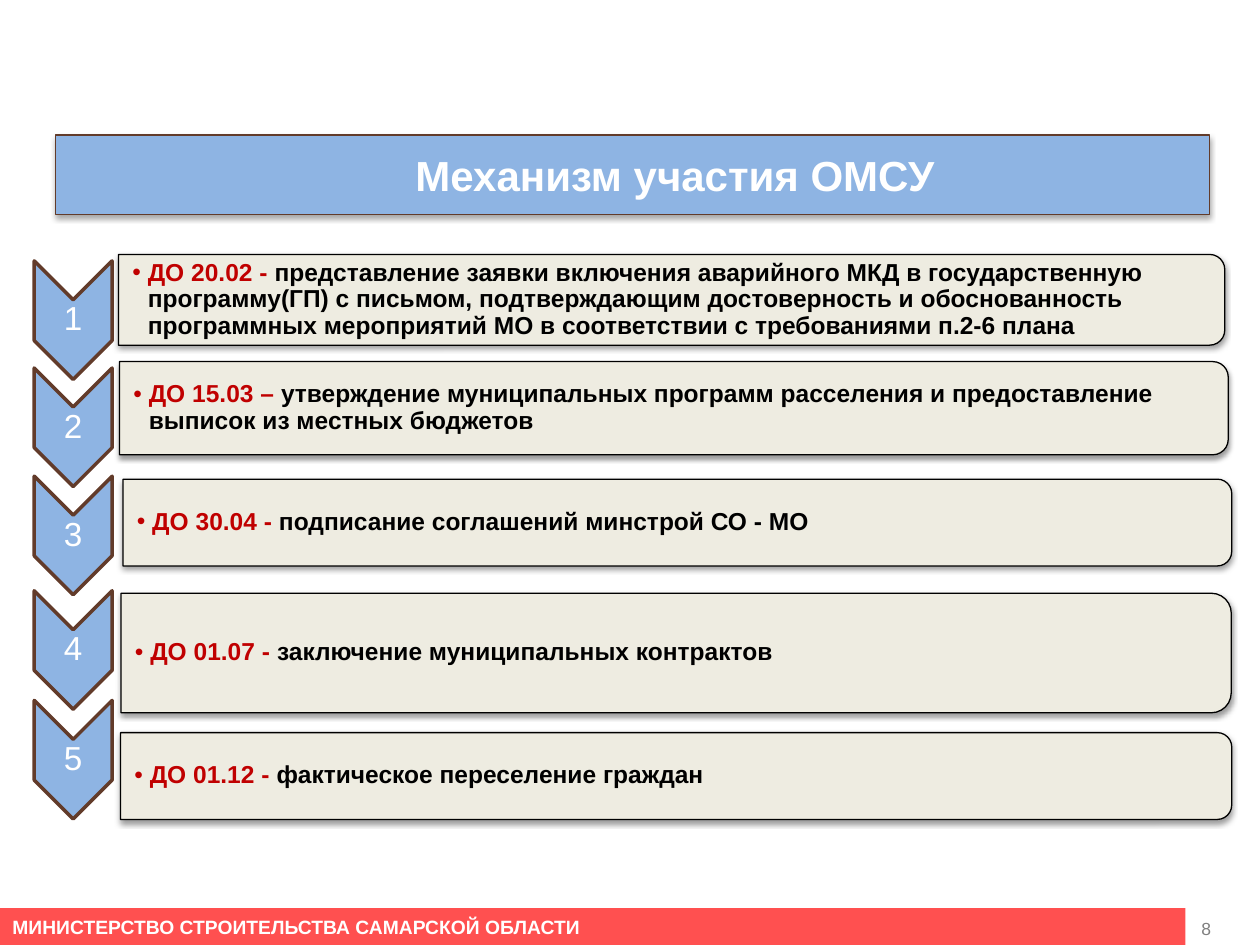
from lxml import etree
from pptx import Presentation
from pptx.dml.color import RGBColor
from pptx.enum.shapes import MSO_SHAPE
from pptx.enum.text import MSO_ANCHOR, MSO_AUTO_SIZE, PP_ALIGN
from pptx.oxml.ns import qn
from pptx.util import Cm, Pt

RECT = MSO_SHAPE.RECTANGLE
CHEVRON = MSO_SHAPE.CHEVRON
ROUND = MSO_SHAPE.ROUND_2_SAME_RECTANGLE
MIDDLE, BOTTOM = MSO_ANCHOR.MIDDLE, MSO_ANCHOR.BOTTOM
LEFT, CENTER = PP_ALIGN.LEFT, PP_ALIGN.CENTER
NO_FIT = MSO_AUTO_SIZE.NONE

COLORS = {
    "blue": "8EB4E3", "brown": "623B2A", "cream": "EEECE1", "black": "000000",
    "white": "FFFFFF", "red": "C00000", "coral": "FF5050", "gray": "808080",
}

STEPS = [
    (5.26, (2.39, 5.13, 22.3, 1.83), "ДО 20.02 - ",
     "представление заявки включения аварийного МКД в государственную "
     "программу(ГП) с письмом, подтверждающим достоверность и обоснованность "
     "программных мероприятий МО в соответствии с требованиями п.2-6 плана"),
    (7.42, (2.41, 7.29, 22.35, 1.88), "ДО 15.03 – ",
     "утверждение муниципальных программ расселения и предоставление "
     "выписок из местных бюджетов"),
    (9.6, (2.48, 9.66, 22.35, 1.75), "ДО 30.04 - ",
     "подписание соглашений минстрой СО - МО"),
    (11.91, (2.44, 11.96, 22.38, 2.41), "ДО 01.07 - ",
     "заключение муниципальных контрактов"),
    (14.12, (2.43, 14.77, 22.4, 1.75), "ДО 01.12 - ",
     "фактическое переселение граждан"),
]


def color(name):
    return RGBColor.from_string(COLORS[name])


def paint(shape, fill, line=None, width=0.75):
    shape.fill.solid()
    shape.fill.fore_color.rgb = color(fill)
    if line:
        shape.line.color.rgb = color(line)
        shape.line.width = Pt(width)
    else:
        shape.line.fill.background()


def shade(shape, alpha, dist):
    effects = etree.SubElement(shape._element.spPr, qn("a:effectLst"))
    shadow = etree.SubElement(
        effects, qn("a:outerShdw"), blurRad=str(Pt(3.1)), dist=str(Pt(dist)),
        dir="5400000", rotWithShape="0")
    tint = etree.SubElement(shadow, qn("a:srgbClr"), val=COLORS["black"])
    etree.SubElement(tint, qn("a:alpha"), val=str(alpha * 1000))


def style(font, size, tone, bold=False):
    font.name = "Arial"
    font.size = Pt(size)
    font.bold = bold
    font.color.rgb = color(tone)


def setup(frame, anchor, inset=None):
    frame.word_wrap = True
    frame.auto_size = NO_FIT
    frame.vertical_anchor = anchor
    if inset is not None:
        frame.margin_left = frame.margin_right = Cm(inset)
        frame.margin_top = frame.margin_bottom = Cm(0.03)
    return frame.paragraphs[0]


def add_text(slide, box, anchor=MIDDLE, inset=None):
    area = slide.shapes.add_textbox(*map(Cm, box))
    return setup(area.text_frame, anchor, inset)


def add_shape(slide, kind, box):
    shape = slide.shapes.add_shape(kind, *map(Cm, box))
    shape.shadow.inherit = False
    return shape


def add_turned(slide, kind, box):
    x, y, w, h = box
    shift = (w - h) / 2
    shape = add_shape(slide, kind, (x + shift, y - shift, h, w))
    shape.rotation = 90
    return shape


def add_title(slide, box):
    title = slide.shapes.title
    title.left, title.top, title.width, title.height = map(Cm, box)
    paint(title, "blue", "brown")
    shade(title, 35, 1.8)
    title.text_frame.text = "Механизм участия ОМСУ"
    para = setup(title.text_frame, MIDDLE)
    para.alignment = CENTER
    props = para._p.get_or_add_pPr()
    props.set("marL", "0")
    props.set("indent", str(Cm(1.7)))
    style(para.runs[0].font, 24, "white", True)


def add_badge(slide, box, number):
    paint(add_turned(slide, CHEVRON, box), "blue", "brown", 2)
    para = add_text(slide, box, inset=0.03)
    para.text = str(number)
    para.alignment = CENTER
    para.line_spacing = 0.9
    style(para.runs[0].font, 19, "white")


def add_bar(slide, box, date, task):
    bar = add_turned(slide, ROUND, box)
    paint(bar, "cream", "black")
    bar._element.spPr.remove(bar._element.spPr.find(qn("a:effectLst")))
    shade(bar, 38, 1.6)
    para = add_text(slide, box, inset=0.28)
    para.line_spacing = 0.9
    props = para._p.get_or_add_pPr()
    props.set("marL", str(Cm(0.31)))
    props.set("indent", str(Cm(-0.31)))
    etree.SubElement(props, qn("a:buFont"), typeface="Arial")
    etree.SubElement(props, qn("a:buChar"), char="•")
    for text, tone in ((date, "red"), (task, "black")):
        run = para.add_run()
        run.text = text
        style(run.font, 14, tone, True)


def add_footer(slide, box, page):
    x, y, w, h = box
    band = add_shape(slide, RECT, box)
    paint(band, "coral")
    band.text_frame.text = "МИНИСТЕРСТВО СТРОИТЕЛЬСТВА САМАРСКОЙ ОБЛАСТИ"
    para = setup(band.text_frame, MIDDLE)
    para.alignment = LEFT
    style(para.runs[0].font, 11, "white", True)
    mark = add_text(slide, (x + w + 0.07, y - 0.28, 1.42, 1.02), BOTTOM)
    mark.text = page
    style(mark.runs[0].font, 10, "gray")


def main():
    deck = Presentation()
    deck.slide_width, deck.slide_height = Cm(25.4), Cm(19.05)
    slide = deck.slides.add_slide(deck.slide_layouts[5])
    add_title(slide, (1.12, 2.72, 23.27, 1.6))
    for number, (top, box, date, task) in enumerate(STEPS, 1):
        add_badge(slide, (0.69, top, 1.57, 2.39), number)
        add_bar(slide, box, date, task)
    add_footer(slide, (0, 18.31, 23.9, 0.74), "8")
    deck.save("out.pptx")


if __name__ == "__main__":
    main()
